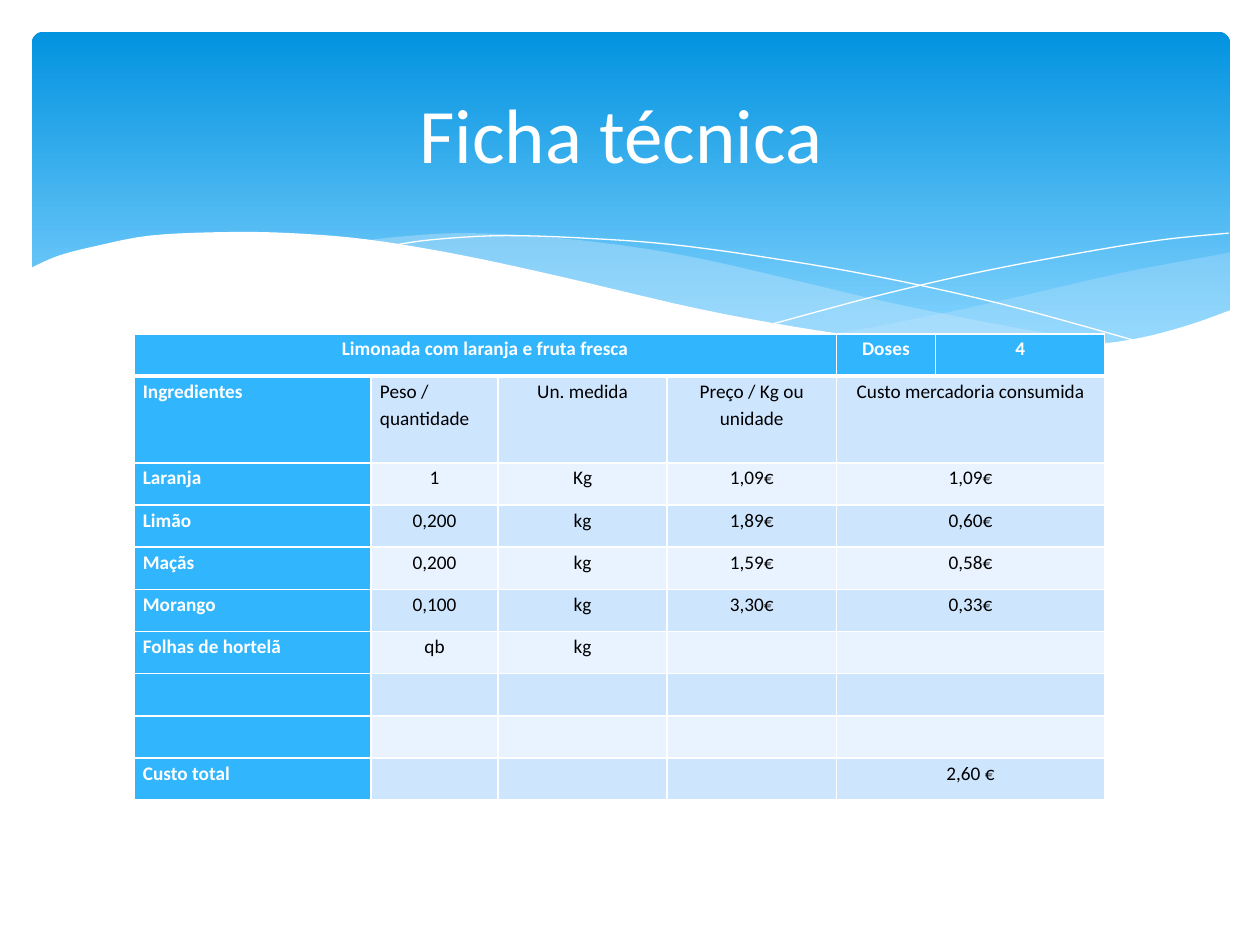
from lxml import etree
from pptx import Presentation
from pptx import util as u
from pptx.dml import color
from pptx.enum import shapes, text
from pptx.oxml import ns

COLORS = {
    "white": "FFFFFF", "black": "000000", "deep": "0293E0", "sky": "83D3FE",
    "mist": "C6E7FC", "accent": "31B6FD", "band": "CEE5FE", "pale": "E8F3FF",
}

RIGHT_WAVE = [
    [(24.16, 4.45), (22.38, 4.78), (21.23, 5.03), (19.15, 5.51), (17.3, 5.89), (16.15, 6.1)],
    [(16.15, 6.1), (17.63, 6.27), (18.9, 6.4), (20.29, 6.4), (21.74, 6.3), (23.11, 6.02),
     (24.16, 5.64)],
]
MIDDLE_WAVE = [
    [(22.05, 6.3), (19.86, 5.97), (17.3, 5.46), (15.34, 5), (13.46, 4.57), (11.79, 4.29),
     (10.03, 4.11), (8.53, 4.06), (7.32, 4.14), (6.63, 4.22)],
    [(6.63, 4.22), (8.05, 4.42), (9.63, 4.72), (10.77, 5), (12.83, 5.46), (14.63, 5.84),
     (16.26, 6.12), (17.7, 6.32), (19.3, 6.43), (20.65, 6.43), (22.05, 6.3)],
]
FALLING_LINE = [
    [(7.21, 4.32), (8.1, 4.19), (9.55, 4.11), (11.28, 4.17), (12.9, 4.29), (14.81, 4.55),
     (17.02, 4.93), (19.56, 5.49), (22.4, 6.27)],
]
RISING_LINE = [
    [(14.94, 5.89), (17.02, 5.33), (19.08, 4.85), (21.36, 4.42), (22.83, 4.19), (24.13, 4.06)],
]
WHITE_WAVE = [
    [(24.18, 5.61), (23.24, 5.94), (22.2, 6.2), (20.96, 6.35), (19.51, 6.38), (17.81, 6.27),
     (15.82, 6.02), (13.46, 5.59), (10.72, 4.95), (8.64, 4.5), (6.78, 4.19), (5.21, 4.06),
     (3.86, 4.04), (2.39, 4.11), (1.3, 4.32), (0.53, 4.52), (-0.05, 4.78)],
    [(-0.05, 7.72), (24.18, 7.72)],
]

COLUMNS = [4.78, 2.56, 3.41, 3.41, 2, 3.41]
ROW_HEIGHT, HEADING_HEIGHT = 0.85, 1.75
ROWS = [
    ["Limonada com laranja e fruta fresca", "", "", "", "Doses", "4"],
    ["Ingredientes", "Peso / quantidade", "Un. medida", "Preço / Kg ou unidade",
     "Custo mercadoria consumida", ""],
    ["Laranja", "1", "Kg", "1,09€", "1,09€", ""],
    ["Limão", "0,200", "kg", "1,89€", "0,60€", ""],
    ["Maçãs", "0,200", "kg", "1,59€", "0,58€", ""],
    ["Morango", "0,100", "kg", "3,30€", "0,33€", ""],
    ["Folhas de hortelã", "qb", "kg", "", "", ""],
    [""] * 6,
    [""] * 6,
    ["Custo total", "", "", "", "2,60 €", ""],
]


def rgb(name):
    return color.RGBColor.from_string(COLORS[name])


def apply(target, values):
    for name, value in values.items():
        setattr(target, name, value)


def fill_solid(target, name):
    target.fill.solid()
    target.fill.fore_color.rgb = rgb(name)


def write(para, words, size, name, bold=False, align=text.PP_ALIGN.CENTER):
    para.alignment = align
    span = para.add_run()
    span.text = words
    apply(span.font, {"name": "Calibri", "size": u.Pt(size), "bold": bold})
    span.font.color.rgb = rgb(name)


def smooth(knots, steps=5):
    if len(knots) < 3:
        return knots
    padded = [knots[0], *knots, knots[-1]]
    points = [knots[0]]
    for a, b, c, d in zip(padded, padded[1:], padded[2:], padded[3:]):
        for step in range(1, steps + 1):
            t = step / steps
            points.append(tuple(
                (2 * q + (r - p) * t + (2 * p - 5 * q + 4 * r - s) * t ** 2
                 + (3 * q - p - 3 * r + s) * t ** 3) / 2
                for p, q, r, s in zip(a, b, c, d)))
    return points


def add_wave(page, box, curves, name, opacity=None, closed=True):
    left, top = box[:2]
    points = [(u.Cm(left + x), u.Cm(top + y)) for knots in curves for x, y in smooth(knots)]
    builder = page.shapes.build_freeform(*points[0])
    builder.add_line_segments(points[1:], close=closed)
    wave = builder.convert_to_shape()
    wave.shadow.inherit = False
    if not closed:
        wave.fill.background()
        wave.line.color.rgb = rgb(name)
        wave.line.width = u.Pt(0)
        return
    fill_solid(wave, name)
    wave.line.fill.background()
    if opacity:
        tint = wave.fill._xPr.find(".//" + ns.qn("a:srgbClr"))
        etree.SubElement(tint, ns.qn("a:alpha"), val=str(opacity * 1000))


def add_banner(page, box):
    banner = page.shapes.add_shape(
        shapes.MSO_SHAPE.ROUNDED_RECTANGLE, *[u.Cm(length) for length in box])
    banner.adjustments[0] = 0.034
    banner.shadow.inherit = False
    banner.line.fill.background()
    banner.fill.gradient()
    banner.fill.gradient_angle = 270
    for stop, name, position in zip(banner.fill.gradient_stops, ("deep", "sky"), (0, 0.9)):
        stop.color.rgb = rgb(name)
        stop.position = position
    add_wave(page, box, RIGHT_WAVE, "mist", 29)
    add_wave(page, box, MIDDLE_WAVE, "mist", 40)
    add_wave(page, box, FALLING_LINE, "white", closed=False)
    add_wave(page, box, RISING_LINE, "white", closed=False)
    add_wave(page, box, WHITE_WAVE, "white")


def add_title(page, box):
    title = page.shapes.add_textbox(*[u.Cm(length) for length in box])
    apply(title.text_frame, {"word_wrap": True, "vertical_anchor": text.MSO_ANCHOR.MIDDLE})
    write(title.text_frame.paragraphs[0], "Ficha técnica ", 44, "white")


def add_borders(cell, bottom):
    properties = cell._tc.get_or_add_tcPr()
    widths = {"lnL": 1, "lnR": 1, "lnT": 1, "lnB": bottom}
    for index, (side, width) in enumerate(widths.items()):
        line = etree.Element(ns.qn("a:" + side), w=str(u.Pt(width)))
        paint = etree.SubElement(line, ns.qn("a:solidFill"))
        etree.SubElement(paint, ns.qn("a:srgbClr"), val=COLORS["white"])
        properties.insert(index, line)


def format_cell(cell, words, row, column):
    accent = row == 0 or column == 0
    fill_solid(cell, "accent" if accent else "band" if row % 2 else "pale")
    add_borders(cell, 1 if row else 3)
    apply(cell, {"margin_left": u.Cm(0.18), "margin_right": u.Cm(0.18),
                 "margin_top": 0, "margin_bottom": 0})
    if words:
        para = cell.text_frame.paragraphs[0]
        para.line_spacing = 1.15
        at_left = (row and column == 0) or (row, column) == (1, 1)
        align = text.PP_ALIGN.LEFT if at_left else text.PP_ALIGN.CENTER
        write(para, words, 11, "white" if accent else "black", accent, align)


def add_recipe(page, box):
    table = page.shapes.add_table(
        len(ROWS), len(COLUMNS), *[u.Cm(length) for length in box]).table
    for column, width in zip(table.columns, COLUMNS):
        column.width = u.Cm(width)
    for row, values in enumerate(ROWS):
        table.rows[row].height = u.Cm(HEADING_HEIGHT if row == 1 else ROW_HEIGHT)
        for column, words in enumerate(values):
            format_cell(table.cell(row, column), words, row, column)
        first, last = (4, 5) if row else (0, 3)
        table.cell(row, first).merge(table.cell(row, last))


def main():
    deck = Presentation()
    apply(deck, {"slide_width": u.Cm(25.4), "slide_height": u.Cm(19.05)})
    page = deck.slides.add_slide(deck.slide_layouts[6])
    add_banner(page, (0.64, 0.64, 24.16, 6.86))
    add_title(page, (1.27, 0.94, 22.86, 3.48))
    add_recipe(page, (2.7, 6.73, sum(COLUMNS), ROW_HEIGHT * 9 + HEADING_HEIGHT))
    deck.save("out.pptx")


if __name__ == "__main__":
    main()
